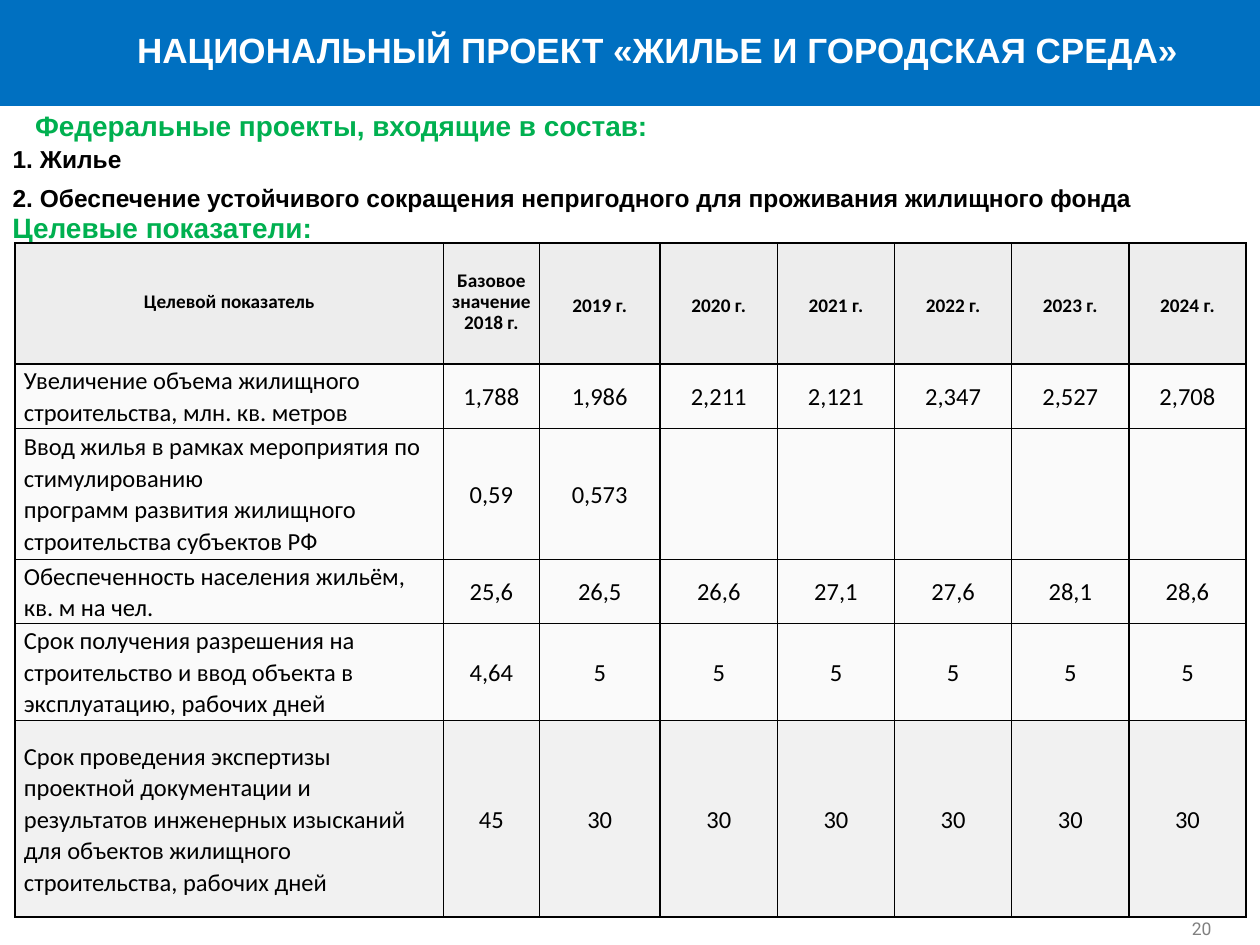
from dataclasses import dataclass
from typing import NamedTuple

from lxml.etree import SubElement
from pptx import Presentation
from pptx.dml.color import RGBColor as Color
from pptx.enum.shapes import MSO_SHAPE as Preset
from pptx.enum.text import MSO_ANCHOR as Anchor, MSO_AUTO_SIZE as AutoSize, PP_ALIGN as Align
from pptx.oxml.ns import qn
from pptx.util import Inches, Pt

UNIT = Inches(0.1)
COLUMNS, ROWS = 100, 75


@dataclass(frozen=True)
class Theme:
    heading_font: str = "Arial"
    table_font: str = "Calibri"
    number_font: str = "Roboto"
    band: str = "0070C1"
    white: str = "FFFFFF"
    black: str = "000000"
    green: str = "00B050"
    gray: str = "808080"
    head_fill: str = "EDEDED"
    row_fill: str = "F2F2F2"
    last_fill: str = "D9D9D9"
    title_size: int = 20
    heading_size: int = 16
    text_size: int = 14
    head_size: int = 11
    number_size: int = 10


THEME = Theme()


class Box(NamedTuple):
    left: float
    top: float
    width: float
    height: float

    def inner(self, left, top, width, height):
        return Box(self.left + left, self.top + top, width, height)

    def lengths(self):
        return [round(value * UNIT) for value in self]


HEADER = ["Целевой показатель", "Базовое значение 2018 г."] + [
    f"{year} г." for year in range(2019, 2025)]
INDICATORS = [
    ["Увеличение объема жилищного строительства, млн. кв. метров",
     "1,788", "1,986", "2,211", "2,121", "2,347", "2,527", "2,708"],
    ["Ввод жилья в рамках мероприятия по стимулированию\n"
     "программ развития жилищного строительства субъектов РФ",
     "0,59", "0,573"] + [""] * 5,
    ["Обеспеченность населения жильём, кв. м на чел.",
     "25,6", "26,5", "26,6", "27,1", "27,6", "28,1", "28,6"],
    ["Срок получения разрешения на строительство и ввод объекта в эксплуатацию, рабочих дней",
     "4,64"] + ["5"] * 6,
    ["Срок проведения экспертизы проектной документации и результатов инженерных изысканий "
     "для объектов жилищного строительства, рабочих дней", "45"] + ["30"] * 6,
]
COLUMN_WIDTHS = [34, 7.6, 9.6] + [9.3] * 5
ROW_HEIGHTS = [9.6, 5.1, 10.4, 5.1, 7.7, 15.6]


def move(shape, box):
    shape.left, shape.top, shape.width, shape.height = box.lengths()


def style(para, font, size, color, bold=False, align=Align.LEFT):
    para.alignment = align
    for span in para.runs:
        span.font.name = font
        span.font.size = Pt(size)
        span.font.bold = bold
        span.font.color.rgb = Color.from_string(color)


def set_margins(holder, side, top):
    holder.margin_left = holder.margin_right = Inches(side)
    holder.margin_top = holder.margin_bottom = Inches(top)


def set_frame(frame, side=0.1, wrap=True, anchor=Anchor.TOP):
    set_margins(frame, side, 0.05)
    frame.word_wrap = wrap
    frame.auto_size = AutoSize.SHAPE_TO_FIT_TEXT
    frame.vertical_anchor = anchor


def add_title_band(page, box):
    title = page.shapes.title
    band = page.shapes.add_shape(Preset.RECTANGLE, *box.lengths())
    band.shadow.inherit = False
    band.fill.solid()
    band.fill.fore_color.rgb = Color.from_string(THEME.band)
    band.line.fill.background()
    title.element.addprevious(band.element)
    move(title, box.inner(10, 1.8, 84.4, 4.4))
    frame = title.text_frame
    frame.text = "НАЦИОНАЛЬНЫЙ ПРОЕКТ «ЖИЛЬЕ И ГОРОДСКАЯ СРЕДА»"
    set_frame(frame, side=0.05, wrap=False)
    style(frame.paragraphs[0], THEME.heading_font, THEME.title_size, THEME.white, True, Align.CENTER)


def add_heading(page, box, text):
    frame = page.shapes.add_textbox(*box.lengths()).text_frame
    frame.text = text
    set_frame(frame)
    style(frame.paragraphs[0], THEME.heading_font, THEME.heading_size, THEME.green, True)


def add_projects(page, box):
    add_heading(page, box.inner(1.8, 0, 56.1, 3.7), "Федеральные проекты, входящие в состав:")
    body = page.placeholders[1]
    move(body, box.inner(0, 2.8, 96.5, 6.4))
    frame = body.text_frame
    frame.text = ("1. Жилье\n"
                  "2. Обеспечение устойчивого сокращения непригодного для проживания жилищного фонда")
    set_frame(frame)
    for index, para in enumerate(frame.paragraphs):
        properties = para._p.get_or_add_pPr()
        properties.set("marL", "0")
        properties.set("indent", "0")
        SubElement(properties, qn("a:buNone"))
        para.space_before = Pt(5.5 * index)
        style(para, THEME.heading_font, THEME.text_size, THEME.black, True)
    add_heading(page, box.inner(0, 8.1, 36.2, 3.7), "Целевые показатели:")


def paint_cell(cell, color, opacity):
    properties = cell._tc.get_or_add_tcPr()
    for side in ("a:lnL", "a:lnR", "a:lnT", "a:lnB"):
        line = SubElement(properties, qn(side), w=str(Pt(1)))
        SubElement(SubElement(line, qn("a:solidFill")), qn("a:srgbClr"), val=THEME.black)
    cell.fill.solid()
    cell.fill.fore_color.rgb = Color.from_string(color)
    if opacity < 100:
        tint = properties.find(qn("a:solidFill")).find(qn("a:srgbClr"))
        SubElement(tint, qn("a:alpha"), val=str(opacity * 1000))


def fill_cell(cell, text, row, column):
    is_head = row == 0
    cell.text = text
    cell.vertical_anchor = Anchor.MIDDLE
    set_margins(cell, 0.01 if is_head else 0.07, 0)
    for para in cell.text_frame.paragraphs:
        if is_head:
            para.line_spacing = Pt(12) if column < 2 else 1.15
        else:
            para.line_spacing = Pt(18)
        style(para, THEME.table_font, THEME.head_size if is_head else THEME.text_size,
              THEME.black, is_head, Align.CENTER if is_head or column else Align.LEFT)


def add_indicators(page, box):
    records = [HEADER] + INDICATORS
    table = page.shapes.add_table(len(records), len(HEADER), *box.lengths()).table
    table.horz_banding = False
    for column, width in zip(table.columns, COLUMN_WIDTHS):
        column.width = round(width * UNIT)
    for row, height in zip(table.rows, ROW_HEIGHTS):
        row.height = round(height * UNIT)
    paints = [(THEME.head_fill, 100)] + [(THEME.row_fill, 36)] * 4 + [(THEME.last_fill, 35)]
    for row, (record, paint) in enumerate(zip(records, paints)):
        for column, text in enumerate(record):
            cell = table.cell(row, column)
            fill_cell(cell, text, row, column)
            paint_cell(cell, *paint)


def add_page_number(page, box):
    frame = page.shapes.add_textbox(*box.lengths()).text_frame
    frame.text = "20"
    set_frame(frame, side=0.05, wrap=False, anchor=Anchor.BOTTOM)
    style(frame.paragraphs[0], THEME.number_font, THEME.number_size, THEME.gray)


def main():
    deck = Presentation()
    deck.slide_width, deck.slide_height = COLUMNS * UNIT, ROWS * UNIT
    page = deck.slides.add_slide(deck.slide_layouts[1])
    add_title_band(page, Box(0, 0, COLUMNS, 8.4))
    add_projects(page, Box(0, 8.1, COLUMNS, 11.8))
    add_indicators(page, Box(1.2, 19.3, sum(COLUMN_WIDTHS), sum(ROW_HEIGHTS)))
    add_page_number(page, Box(94.1, 71, 5.6, 4))
    deck.save("out.pptx")


if __name__ == "__main__":
    main()
